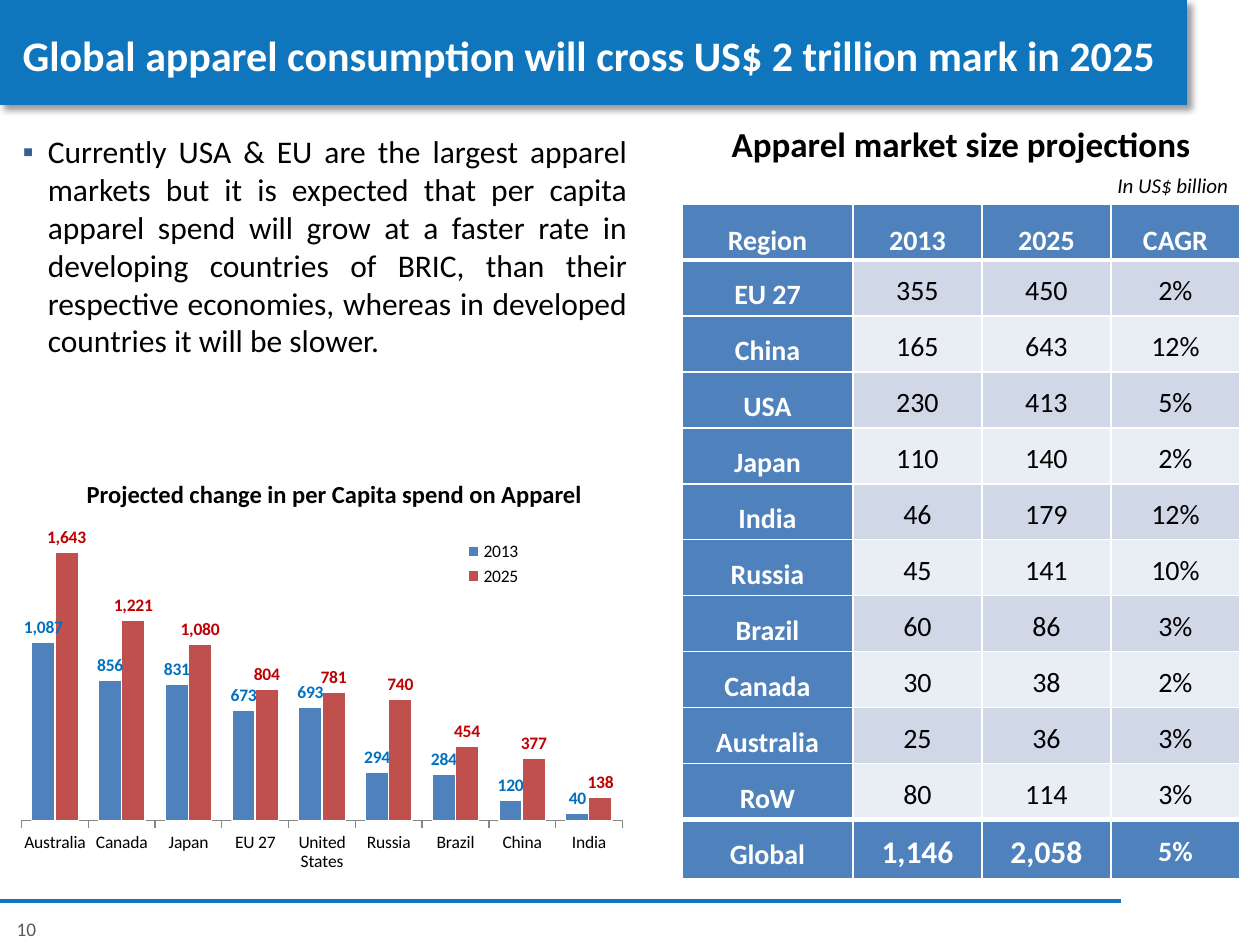
from lxml import etree
from pptx import Presentation
from pptx.chart.data import CategoryChartData
from pptx.dml.color import RGBColor
from pptx.enum.chart import XL_CHART_TYPE as CT, XL_LABEL_POSITION as LP, XL_LEGEND_POSITION as LEG, XL_TICK_MARK as TM
from pptx.enum.shapes import MSO_CONNECTOR, MSO_SHAPE
from pptx.enum.text import MSO_ANCHOR as ANCHOR, PP_ALIGN as AL
from pptx.oxml import parse_xml
from pptx.oxml.ns import nsdecls, qn
from pptx.util import Emu, Pt

SCALE = 914400 / 126
WHITE = RGBColor(0xFF, 0xFF, 0xFF)
BLACK = RGBColor(0, 0, 0)
GRAY = RGBColor(0x59, 0x59, 0x59)
AXIS = RGBColor(0x86, 0x86, 0x86)
BANNER = RGBColor(0x0F, 0x75, 0xBC)
BLUE = RGBColor(0x4F, 0x81, 0xBD)
RED = RGBColor(0xC0, 0x50, 0x4D)
LABEL_BLUE = RGBColor(0, 0x70, 0xC0)
LABEL_RED = RGBColor(0xC0, 0, 0)
BAND_DARK = RGBColor(0xD0, 0xD8, 0xE8)
BAND_LIGHT = RGBColor(0xE9, 0xED, 0xF4)


def px(*lengths):
    return [Emu(round(n * SCALE)) for n in lengths]


def write(tf, text, color, align, **font):
    p = tf.paragraphs[0]
    p.alignment = align
    r = p.add_run()
    r.text = text
    r.font.color.rgb = color
    for name, value in {"name": "Calibri", **font}.items():
        setattr(r.font, name, value)
    return p


prs = Presentation()
prs.slide_width, prs.slide_height = px(1260, 945)
s = prs.slides.add_slide(prs.slide_layouts[1])

banner = s.shapes.add_shape(MSO_SHAPE.RECTANGLE, *px(0, 0, 1187, 105))
banner.fill.solid()
banner.fill.fore_color.rgb = BANNER
banner.line.fill.background()
banner.shadow.inherit = False
banner._element.spPr.find(qn("a:effectLst")).append(parse_xml(
    f'<a:outerShdw {nsdecls("a")} blurRad="50800" dist="38100" dir="2700000" algn="tl" rotWithShape="0">'
    '<a:srgbClr val="000000"><a:alpha val="40000"/></a:srgbClr></a:outerShdw>'))
s.shapes._spTree.insert(2, banner._element)

rule = s.shapes.add_connector(MSO_CONNECTOR.STRAIGHT, *px(0, 901, 1121, 901))
rule.line.color.rgb = BANNER
rule.line.width = Pt(2.25)
etree.SubElement(rule._element.spPr, qn("a:effectLst"))

title, body = s.placeholders
title.left, title.top, title.width, title.height = px(10, 21, 1176, 67)
title.text_frame.vertical_anchor = ANCHOR.MIDDLE
write(title.text_frame, "Global apparel consumption will cross US$ 2 trillion mark in 2025",
      WHITE, AL.LEFT, size=Pt(24), bold=True)

body.left, body.top, body.width, body.height = px(10, 126, 630, 735)
p = write(body.text_frame,
          "Currently USA & EU are the largest apparel markets but it is expected that per capita "
          "apparel spend will grow at a faster rate in developing countries of BRIC, than their "
          "respective economies, whereas in developed countries it will be slower.",
          BLACK, AL.JUSTIFY, size=Pt(18))
p.space_before = Pt(0)
pPr = p._p.get_or_add_pPr()
pPr.set("marL", "182880")
pPr.set("indent", "-182880")
for bullet in ('<a:buClr {}><a:srgbClr val="376092"/></a:buClr>',
               '<a:buFont {} typeface="Arial"/>', '<a:buChar {} char="▪"/>'):
    pPr.append(parse_xml(bullet.format(nsdecls("a"))))

TEXTS = [
    ((0, 911, 53, 37), "10", GRAY, AL.CENTER, True, dict(size=Pt(11))),
    ((662, 116, 598, 55), "Apparel market size projections", BLACK, AL.CENTER, True,
     dict(size=Pt(20), bold=True)),
    ((1105, 166, 150, 38), "In US$ billion", BLACK, AL.LEFT, False, dict(size=Pt(12), italic=True)),
    ((19, 473, 631, 43), "Projected change in per Capita spend on Apparel", BLACK, AL.CENTER, True,
     dict(size=Pt(14), bold=True)),
]
for box, text, color, align, wrap, font in TEXTS:
    tf = s.shapes.add_textbox(*px(*box)).text_frame
    tf.word_wrap = wrap
    write(tf, text, color, align, **font)

SERIES = [
    ("2013", (1087, 856, 831, 673, 693, 294, 284, 120, 40), BLUE, LABEL_BLUE),
    ("2025", (1643, 1221, 1080, 804, 781, 740, 454, 377, 138), RED, LABEL_RED),
]
data = CategoryChartData(number_format="#,##0")
data.categories = ["Australia", "Canada", "Japan", "EU 27", "United States",
                   "Russia", "Brazil", "China", "India"]
for name, values, *_ in SERIES:
    data.add_series(name, values)
chart = s.shapes.add_chart(CT.COLUMN_CLUSTERED, *px(21, 512, 602, 360), data).chart
chart.has_title = False
chart.font.name, chart.font.size, chart.font.color.rgb = "Calibri", Pt(10), BLACK
chart.value_axis.visible = False
chart.value_axis.has_major_gridlines = False
chart.value_axis.minimum_scale, chart.value_axis.maximum_scale = 0, 1800
chart.category_axis.major_tick_mark = TM.OUTSIDE
chart.category_axis.format.line.color.rgb = AXIS
chart.has_legend = True
chart.legend.position = LEG.RIGHT
chart.legend.include_in_layout = False
plot = chart.plots[0]
plot.gap_width, plot.overlap, plot.vary_by_categories = 87, 1, False
for series, (_, _, fill, label_color) in zip(plot.series, SERIES):
    series.format.fill.solid()
    series.format.fill.fore_color.rgb = fill
    series.format.line.color.rgb = WHITE
    series.format.line.width = Pt(0.75)
    labels = series.data_labels
    labels.show_value = True
    labels.position = LP.OUTSIDE_END
    labels.number_format, labels.number_format_is_linked = "#,##0", False
    labels.font.size, labels.font.bold, labels.font.color.rgb = Pt(10), True, label_color

LAYOUTS = [
    (chart._chartSpace.chart.plotArea, '<c:layoutTarget val="inner"/>', (0, 0.04, 1, 0.82)),
    (chart.legend._element, "", (0.72, 0.07, 0.13, 0.15)),
]
for parent, target, (x, y, w, h) in LAYOUTS:
    for old in parent.findall(qn("c:layout")):
        parent.remove(old)
    layout = parse_xml(
        f'<c:layout {nsdecls("c")}><c:manualLayout>{target}<c:xMode val="edge"/><c:yMode val="edge"/>'
        f'<c:x val="{x}"/><c:y val="{y}"/><c:w val="{w}"/><c:h val="{h}"/></c:manualLayout></c:layout>')
    parent.insert(1 if parent is chart.legend._element else 0, layout)

ROWS = [
    ("Region", "2013", "2025", "CAGR"),
    ("EU 27", "355", "450", "2%"),
    ("China", "165", "643", "12%"),
    ("USA", "230", "413", "5%"),
    ("Japan", "110", "140", "2%"),
    ("India", "46", "179", "12%"),
    ("Russia", "45", "141", "10%"),
    ("Brazil", "60", "86", "3%"),
    ("Canada", "30", "38", "2%"),
    ("Australia", "25", "36", "3%"),
    ("RoW", "80", "114", "3%"),
    ("Global", "1,146", "2,058", "5%"),
]
LAST = len(ROWS) - 1
table = s.shapes.add_table(len(ROWS), 4, *px(682, 204, 558, 675)).table
for column, width in zip(table.columns, px(171, 129, 129, 129)):
    column.width = width
for i, row in enumerate(ROWS):
    table.rows[i].height = px(59 if i == LAST else 56)[0]
    for j, text in enumerate(row):
        cell = table.cell(i, j)
        strong = i in (0, LAST) or j == 0
        side = 1 if j == 2 and i else 9
        cell.margin_left, cell.margin_right, cell.margin_top, cell.margin_bottom = px(side, side, 1, 0)
        cell.vertical_anchor = ANCHOR.TOP if i and j == 0 else ANCHOR.MIDDLE
        size = Pt(18 if i == LAST and j in (1, 2) else 16)
        p = write(cell.text_frame, text, WHITE if strong else BLACK, AL.CENTER, size=size, bold=strong)
        if i == 0 or j == 0:
            p.line_spacing = 1.5
        else:
            p.line_spacing, p.space_after = 1.15, Pt(10)
        tcPr = cell._tc.get_or_add_tcPr()
        widths = {"L": 1, "R": 1, "T": 3 if i in (1, LAST) else 1, "B": 3 if i in (0, LAST - 1) else 1}
        for edge, width in widths.items():
            tcPr.append(parse_xml(
                f'<a:ln{edge} {nsdecls("a")} w="{Pt(width)}"><a:solidFill><a:srgbClr val="{WHITE}"/>'
                f'</a:solidFill></a:ln{edge}>'))
        cell.fill.solid()
        cell.fill.fore_color.rgb = BLUE if strong else BAND_DARK if i % 2 else BAND_LIGHT

prs.save("out.pptx")
